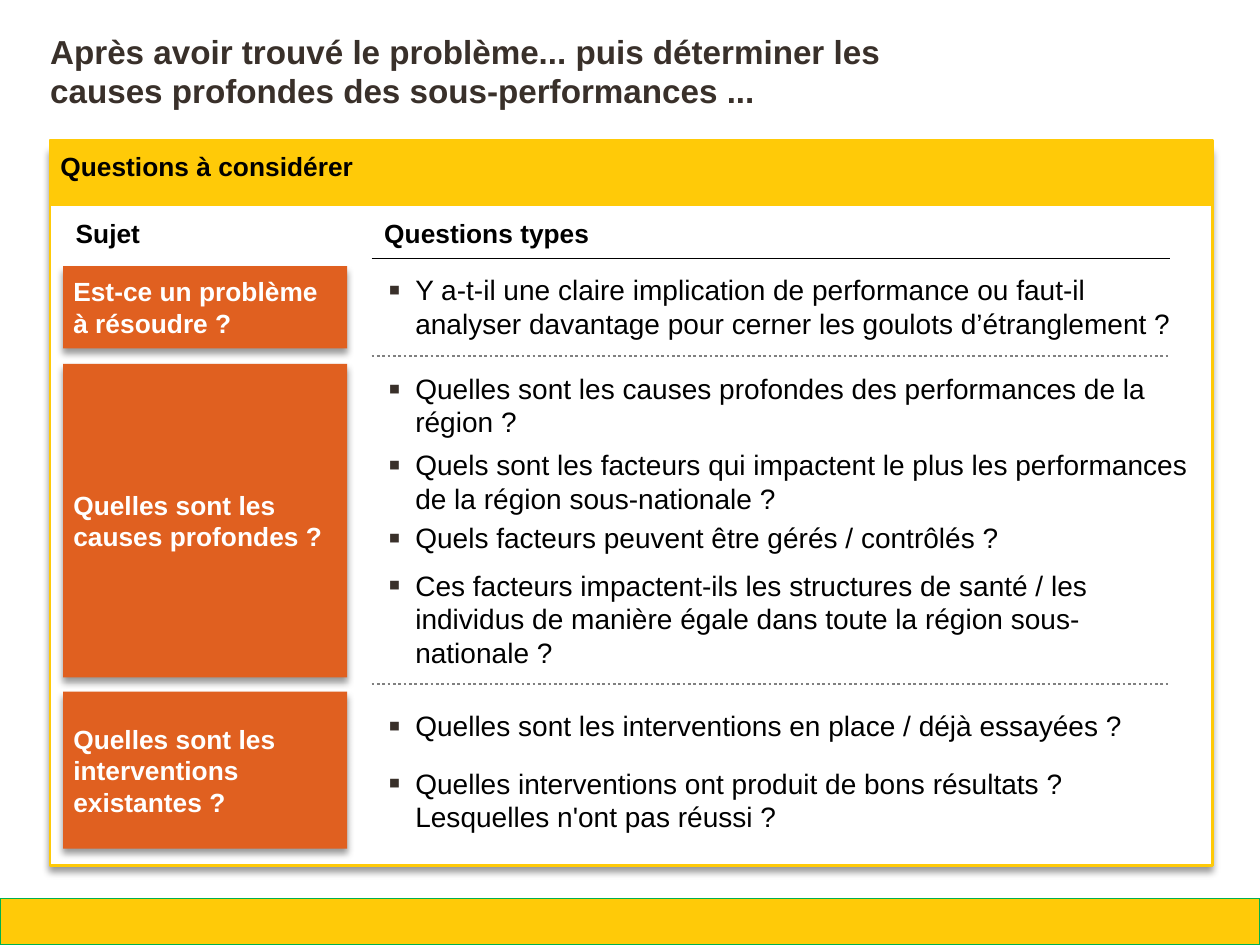
from dataclasses import dataclass

from lxml.etree import SubElement
from pptx import Presentation
from pptx.dml.color import RGBColor
from pptx.enum.dml import MSO_LINE
from pptx.enum.shapes import MSO_CONNECTOR, MSO_SHAPE
from pptx.enum.text import MSO_ANCHOR, MSO_AUTO_SIZE, PP_ALIGN
from pptx.oxml.ns import qn
from pptx.util import Emu, Pt

PX = 9144
YELLOW, ORANGE, BLACK, WHITE = "FFCA08", "E06020", "000000", "FFFFFF"
BROWN, GREY, GREEN = "39302A", "808080", "00B050"
LABEL_SIZE, LIST_SIZE, TITLE_SIZE = 14.7, 15.7, 18.6


@dataclass(frozen=True)
class Box:
    left: int
    top: int
    width: int
    height: int


@dataclass(frozen=True)
class Panel:
    box: Box
    fill: str
    line: str = ""
    line_width: float = 1.5
    shadow: bool = False
    text: str = ""
    color: str = BLACK
    anchor: MSO_ANCHOR = MSO_ANCHOR.TOP


@dataclass(frozen=True)
class Rule:
    top: int
    color: str = GREY
    width: float = 1.5
    dotted: bool = True


@dataclass(frozen=True)
class Question:
    text: str
    gap: float


def subject(top: int, height: int, text: str) -> Panel:
    return Panel(Box(49, top, 221, height), ORANGE, shadow=True, text=text,
                 color=WHITE, anchor=MSO_ANCHOR.MIDDLE)


PANELS = [
    Panel(Box(0, 699, 980, 36), YELLOW, GREEN, 0.75),
    Panel(Box(39, 115, 904, 558), WHITE, YELLOW, shadow=True),
    Panel(Box(39, 109, 904, 50), YELLOW, YELLOW, text="Questions à considérer"),
    subject(207, 64, "Est-ce un problème à résoudre ?"),
    subject(283, 244, "Quelles sont les causes profondes ?"),
    subject(538, 122, "Quelles sont les interventions existantes ?"),
]
HEADINGS = {"Sujet": 49, "Questions types": 289}
RULES = [Rule(201, BLACK, 0.75, False), Rule(277), Rule(532)]
QUESTIONS = [
    Question("Y a-t-il une claire implication de performance ou faut-il analyser "
             "davantage pour cerner les goulots d’étranglement ?", 0),
    Question("Quelles sont les causes profondes des performances de la région ?", 17.5),
    Question("Quels sont les facteurs qui impactent le plus les performances "
             "de la région sous-nationale ?", 5),
    Question("Quels facteurs peuvent être gérés / contrôlés ?", 3.5),
    Question("Ces facteurs impactent-ils les structures de santé / les individus "
             "de manière égale dans toute la région sous-nationale ?", 7.5),
    Question("Quelles sont les interventions en place / déjà essayées ?", 22),
    Question("Quelles interventions ont produit de bons résultats ? "
             "Lesquelles n'ont pas réussi ?", 13.5),
]


def px(value: int) -> Emu:
    return Emu(value * PX)


def rgb(color: str) -> RGBColor:
    return RGBColor.from_string(color)


def place(shape, box: Box) -> None:
    shape.left, shape.top = px(box.left), px(box.top)
    shape.width, shape.height = px(box.width), px(box.height)


def set_frame(frame, horizontal: int, vertical: int, anchor=MSO_ANCHOR.TOP) -> None:
    frame.word_wrap = True
    frame.auto_size = MSO_AUTO_SIZE.NONE
    frame.vertical_anchor = anchor
    frame.margin_left = frame.margin_right = px(horizontal)
    frame.margin_top = frame.margin_bottom = px(vertical)


def set_font(paragraph, size: float, color: str, bold: bool) -> None:
    paragraph.alignment = PP_ALIGN.LEFT
    font = paragraph.font
    font.name, font.size, font.bold = "Arial", Pt(size), bold
    font.color.rgb = rgb(color)


def write(frame, text: str, size: float, color: str) -> None:
    frame.text = text
    set_font(frame.paragraphs[0], size, color, True)


def add_shadow(shape) -> None:
    effects = shape._element.spPr.find(qn("a:effectLst"))
    shadow = SubElement(effects, qn("a:outerShdw"), blurRad=str(Pt(4)),
                        dist=str(Pt(3)), dir="5400000", rotWithShape="0")
    color = SubElement(shadow, qn("a:srgbClr"), val=BLACK)
    SubElement(color, qn("a:alpha"), val="40000")


def add_panel(slide, panel: Panel) -> None:
    shape = slide.shapes.add_shape(MSO_SHAPE.RECTANGLE, 0, 0, 0, 0)
    place(shape, panel.box)
    shape.fill.solid()
    shape.fill.fore_color.rgb = rgb(panel.fill)
    if panel.line:
        shape.line.color.rgb = rgb(panel.line)
        shape.line.width = Pt(panel.line_width)
    else:
        shape.line.fill.background()
    shape.shadow.inherit = False
    if panel.shadow:
        add_shadow(shape)
    if panel.text:
        set_frame(shape.text_frame, 8, 8, panel.anchor)
        write(shape.text_frame, panel.text, LABEL_SIZE, panel.color)


def add_heading(slide, text: str, left: int) -> None:
    heading = slide.shapes.add_textbox(px(left), px(164), px(318), px(35))
    set_frame(heading.text_frame, 10, 5)
    write(heading.text_frame, text, LABEL_SIZE, BLACK)


def add_rule(slide, rule: Rule) -> None:
    connector = slide.shapes.add_connector(
        MSO_CONNECTOR.STRAIGHT, px(289), px(rule.top), px(910), px(rule.top))
    connector.line.color.rgb = rgb(rule.color)
    connector.line.width = Pt(rule.width)
    if rule.dotted:
        connector.line.dash_style = MSO_LINE.ROUND_DOT
    SubElement(connector._element.spPr, qn("a:effectLst"))


def add_bullet(paragraph) -> None:
    properties = paragraph._p.get_or_add_pPr()
    properties.set("marL", str(px(21)))
    properties.set("indent", str(px(-21)))
    color = SubElement(properties, qn("a:buClr"))
    SubElement(color, qn("a:srgbClr"), val=BROWN)
    SubElement(properties, qn("a:buSzPct"), val="125000")
    SubElement(properties, qn("a:buFont"), typeface="Arial")
    SubElement(properties, qn("a:buChar"), char="▪")


def fill_questions(body) -> None:
    place(body, Box(302, 212, 622, 440))
    frame = body.text_frame
    set_frame(frame, 0, 0)
    frame.text = "\n".join(question.text for question in QUESTIONS)
    for paragraph, question in zip(frame.paragraphs, QUESTIONS):
        add_bullet(paragraph)
        paragraph.space_before = Pt(question.gap)
        set_font(paragraph, LIST_SIZE, BLACK, False)


def main() -> None:
    presentation = Presentation()
    presentation.slide_width, presentation.slide_height = px(980), px(735)
    slide = presentation.slides.add_slide(presentation.slide_layouts[1])
    title, body = slide.placeholders
    for panel in PANELS:
        add_panel(slide, panel)
    for text, left in HEADINGS.items():
        add_heading(slide, text, left)
    for rule in RULES:
        add_rule(slide, rule)
    place(title, Box(39, 24, 648, 63))
    set_frame(title.text_frame, 0, 0)
    write(title.text_frame, "Après avoir trouvé le problème... puis déterminer les "
          "causes profondes des sous-performances ...", TITLE_SIZE, BROWN)
    fill_questions(body)
    for placeholder in (title, body):
        slide.shapes._spTree.append(placeholder._element)
    presentation.save("out.pptx")


if __name__ == "__main__":
    main()
